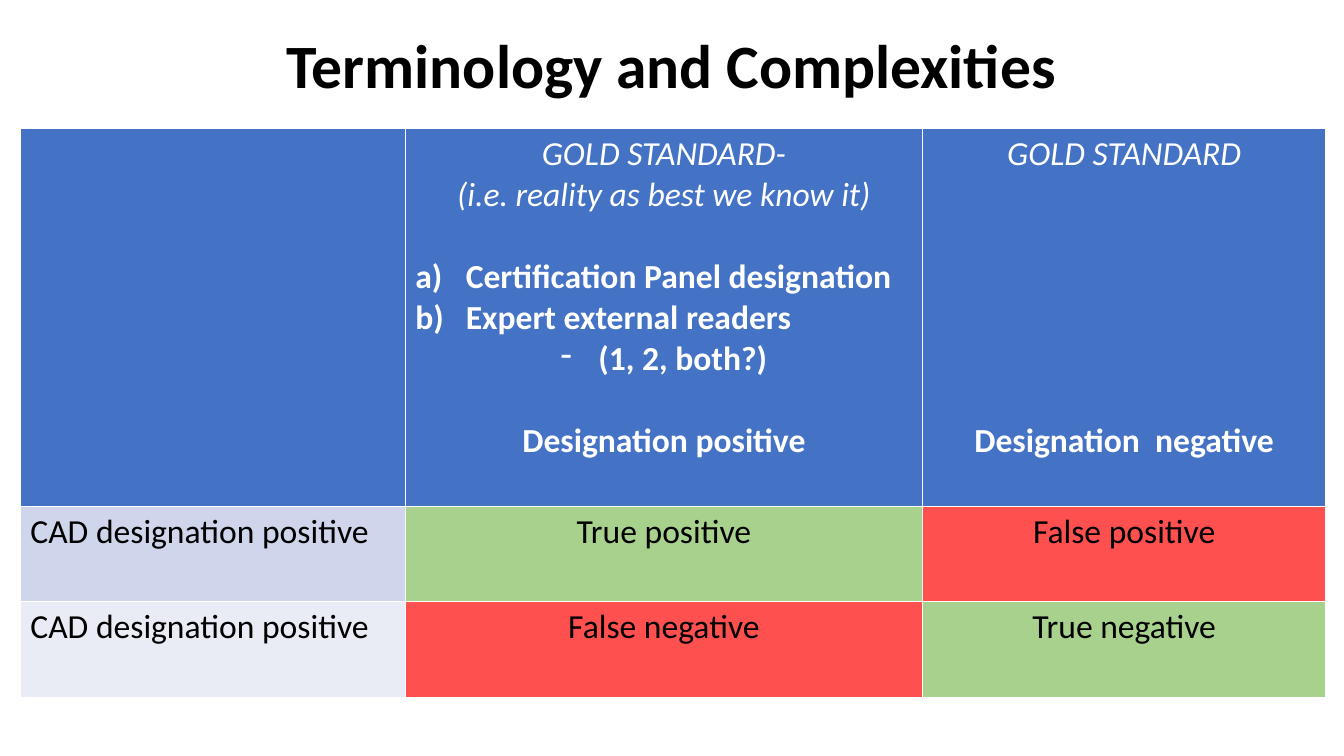
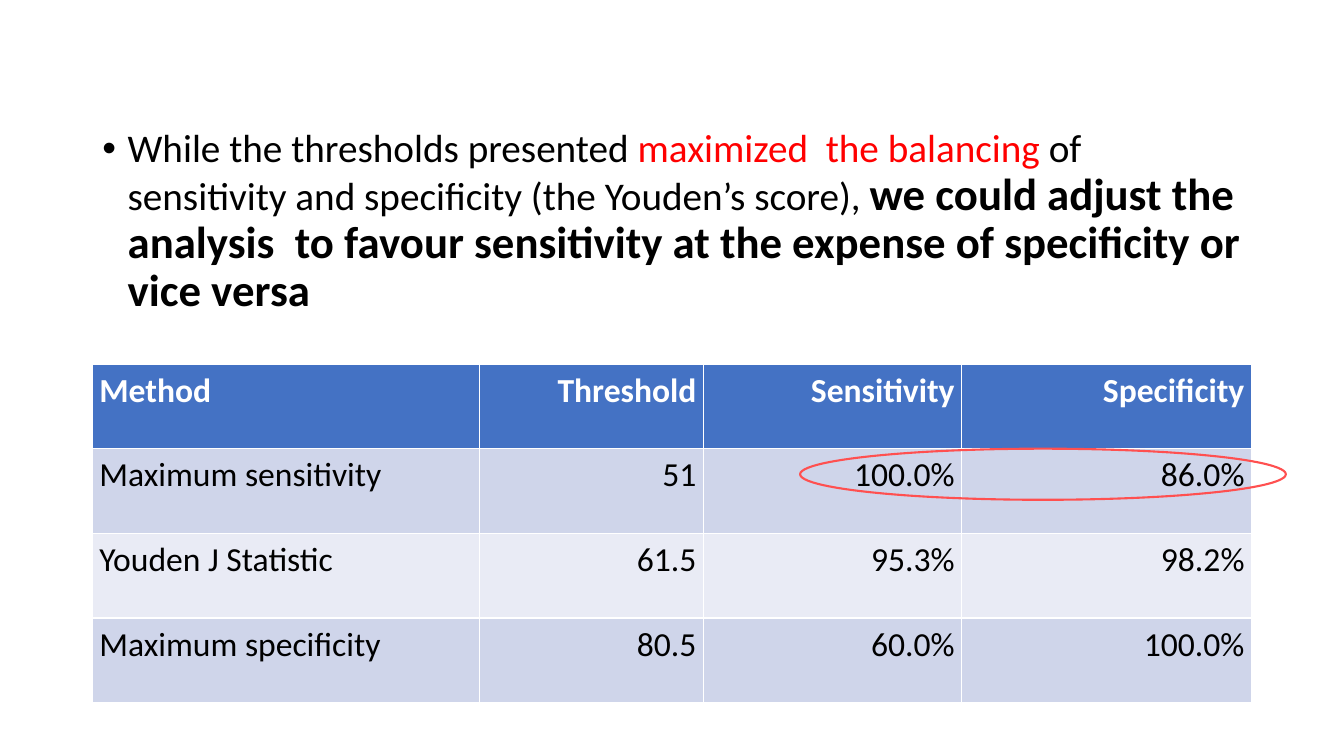
"""Build two slides on diagnostic terminology and threshold choice."""
from dataclasses import dataclass

from lxml import etree
from pptx import Presentation
from pptx.dml.color import RGBColor
from pptx.enum import shapes, text
from pptx.oxml import ns
from pptx.util import Pt


@dataclass(frozen=True)
class Theme:
    font: str = "Calibri"
    black: RGBColor = RGBColor(0, 0, 0)
    white: RGBColor = RGBColor(255, 255, 255)
    blue: RGBColor = RGBColor.from_string("4472C4")
    bands: tuple = (RGBColor.from_string("CFD5EA"), RGBColor.from_string("E9EBF5"))
    green: RGBColor = RGBColor.from_string("A9D18E")
    coral: RGBColor = RGBColor.from_string("FF5050")
    red: RGBColor = RGBColor.from_string("FF0000")
    title_size: Pt = Pt(44)
    strong_size: Pt = Pt(32)
    body_size: Pt = Pt(28)
    table_size: Pt = Pt(24)


theme = Theme()
LEFT, CENTER, RIGHT = text.PP_ALIGN.LEFT, text.PP_ALIGN.CENTER, text.PP_ALIGN.RIGHT


def style(para, size, color, bold=False, italic=False, align=LEFT):
    para.alignment = align
    para.font.name = theme.font
    para.font.size = size
    para.font.color.rgb = color
    para.font.bold = bold
    para.font.italic = italic


def add_grid(page, left, top, widths, heights):
    frame = page.shapes.add_table(len(heights), len(widths), Pt(left), Pt(top),
                                  Pt(sum(widths)), Pt(sum(heights)))
    table = frame.table
    for column, width in zip(table.columns, widths):
        column.width = Pt(width)
    for index, (row, height) in enumerate(zip(table.rows, heights)):
        row.height = Pt(height)
        for cell in row.cells:
            cell.fill.solid()
            cell.fill.fore_color.rgb = theme.bands[(index - 1) % 2] if index else theme.blue
    return table


deck = Presentation()
deck.slide_width, deck.slide_height = Pt(960), Pt(540)

page = deck.slides.add_slide(deck.slide_layouts[5])
title = page.shapes.title
title.left, title.top, title.width, title.height = Pt(66), Pt(20), Pt(828), Pt(58)
title.text_frame.text = "Terminology and Complexities"
title.text_frame.vertical_anchor = text.MSO_ANCHOR.MIDDLE
title_para = title.text_frame.paragraphs[0]
title_para.line_spacing = 0.9
style(title_para, theme.title_size, theme.black, bold=True, align=CENTER)

outcomes = add_grid(page, 14.5, 91.5, [275, 369.5, 288], [270, 68.4, 68.4])
LINE = 29.3
letters = ("buAutoNum", {"type": "alphaLcParenR"})
dash = ("buChar", {"char": "-"})
headings = {
    1: [("GOLD STANDARD-", 0, True, CENTER, 0, None),
        ("(i.e. reality as best we know it)", 0, True, CENTER, 0, None),
        ("Certification Panel designation", 1, False, LEFT, 36, letters),
        ("Expert external readers", 0, False, LEFT, 36, letters),
        ("(1, 2, both?)", 0, False, CENTER, 27, dash),
        ("Designation positive", 1, False, CENTER, 0, None)],
    2: [("GOLD STANDARD", 0, True, CENTER, 0, None),
        ("Designation  negative", 6, False, CENTER, 0, None)],
}
for column, lines in headings.items():
    frame = outcomes.cell(0, column).text_frame
    for index, (words, gap, italic, align, indent, bullet) in enumerate(lines):
        para = frame.add_paragraph() if index else frame.paragraphs[0]
        para.text = words
        if gap:
            para.space_before = Pt(gap * LINE)
        if bullet:
            tag, attributes = bullet
            props = para._p.get_or_add_pPr()
            props.set("marL", str(Pt(indent)))
            props.set("indent", str(-Pt(indent)))
            etree.SubElement(props, ns.qn(f"a:{tag}"), attributes)
        style(para, theme.table_size, theme.white, not italic, italic, align)

results = [
    ("CAD designation positive", ("True positive", theme.green), ("False positive", theme.coral)),
    ("CAD designation positive", ("False negative", theme.coral), ("True negative", theme.green)),
]
for row, (label, *cells) in enumerate(results, 1):
    outcomes.cell(row, 0).text = label
    style(outcomes.cell(row, 0).text_frame.paragraphs[0], theme.table_size, theme.black)
    for column, (words, color) in enumerate(cells, 1):
        cell = outcomes.cell(row, column)
        cell.text = words
        cell.fill.fore_color.rgb = color
        style(cell.text_frame.paragraphs[0], theme.table_size, theme.black, align=CENTER)

page = deck.slides.add_slide(deck.slide_layouts[1])
empty_title = page.shapes.title._element
empty_title.getparent().remove(empty_title)
body = page.placeholders[1]
body.left, body.top, body.width, body.height = Pt(66), Pt(88.5), Pt(828), Pt(160)
body.text_frame.auto_size = text.MSO_AUTO_SIZE.NONE
para = body.text_frame.paragraphs[0]
props = para._p.get_or_add_pPr()
props.set("marL", str(Pt(18)))
props.set("indent", str(-Pt(18)))
para.line_spacing = 0.9
para.space_before = Pt(0)
style(para, theme.body_size, theme.black)
spans = [
    ("While the thresholds presented ", None, False),
    ("maximized  the balancing ", theme.red, False),
    ("of sensitivity and specificity (the Youden’s score), ", None, False),
    ("we could adjust the analysis  to favour sensitivity at the expense of "
     "specificity or vice versa", None, True),
]
for words, color, strong in spans:
    span = para.add_run()
    span.text = words
    if color:
        span.font.color.rgb = color
    if strong:
        span.font.size = theme.strong_size
        span.font.bold = True

methods = [
    ("Method", "Threshold", "Sensitivity", "Specificity"),
    ("Maximum sensitivity", "51", "100.0%", "86.0%"),
    ("Youden J Statistic", "61.5", "95.3%", "98.2%"),
    ("Maximum specificity", "80.5", "60.0%", "100.0%"),
]
thresholds = add_grid(page, 66, 260, [276.5, 160, 184.5, 207], [60.5] * len(methods))
for row, values in enumerate(methods):
    for column, value in enumerate(values):
        cell = thresholds.cell(row, column)
        cell.margin_left = cell.margin_right = Pt(5)
        cell.margin_top = cell.margin_bottom = Pt(0)
        cell.text = value
        para = cell.text_frame.paragraphs[0]
        para.line_spacing = 1.15
        style(para, theme.table_size, theme.black if row else theme.white,
              bold=row == 0, align=RIGHT if column else LEFT)

highlight = page.shapes.add_shape(shapes.MSO_SHAPE.OVAL, Pt(571.5), Pt(320.5), Pt(347), Pt(36.5))
highlight.shadow.inherit = False
highlight.fill.background()
highlight.line.color.rgb = theme.coral
highlight.line.width = Pt(1.5)

deck.save("out.pptx")
